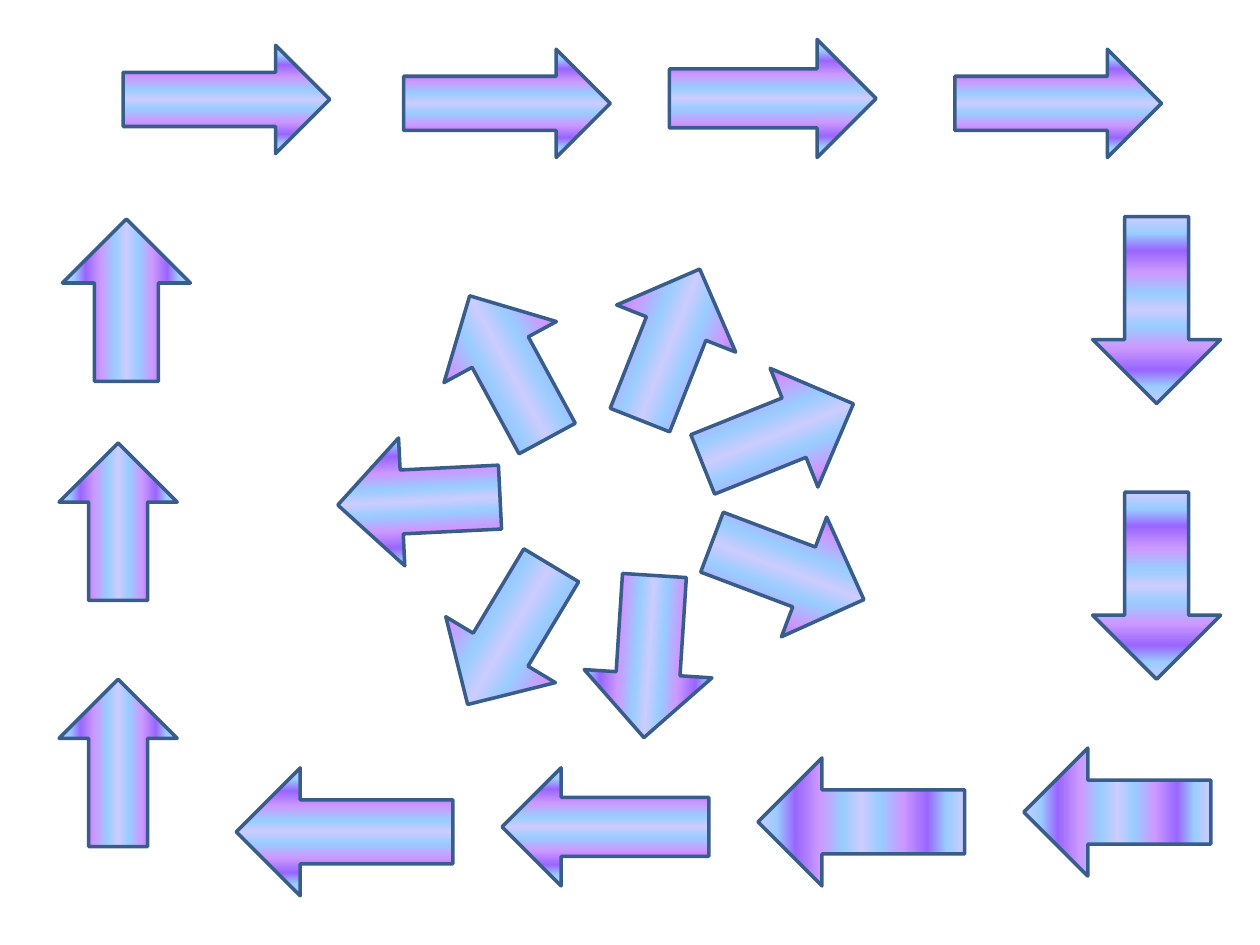
"""Build a slide with a loop of gradient arrows around a ring of seven arrows."""
from lxml import etree
from pptx import Presentation
from pptx import util as u
from pptx.dml.color import RGBColor
from pptx.enum import shapes
from pptx.oxml import ns

COLORS = {"lavender": "CCCCFF", "sky": "99CCFF", "violet": "9966FF",
          "orchid": "CC99FF", "outline": "385D8A"}
HALF = [(0, "lavender"), (9, "sky"), (18, "violet"), (30, "orchid"), (41, "sky")]
STOPS = HALF + [(50, "lavender")] + [(100 - place, name) for place, name in reversed(HALF)]
RIGHT, DOWN = shapes.MSO_SHAPE.RIGHT_ARROW, shapes.MSO_SHAPE.DOWN_ARROW

deck = Presentation()
deck.slide_width, deck.slide_height = u.Inches(10), u.Inches(7.5)
slide = deck.slides.add_slide(deck.slide_layouts[6])
COLUMN, ROW = deck.slide_width / 128, deck.slide_height / 96


def add_arrow(kind, column, row, columns, rows, turn=0):
    arrow = slide.shapes.add_shape(kind, round(column * COLUMN), round(row * ROW),
                                   round(columns * COLUMN), round(rows * ROW))
    arrow.rotation = turn
    arrow.shadow.inherit = False
    gradient = etree.Element(ns.qn("a:gradFill"), rotWithShape="1")
    stops = etree.SubElement(gradient, ns.qn("a:gsLst"))
    for place, name in STOPS:
        stop = etree.SubElement(stops, ns.qn("a:gs"), pos=str(place * 1000))
        etree.SubElement(stop, ns.qn("a:srgbClr"), val=COLORS[name])
    etree.SubElement(gradient, ns.qn("a:lin"), ang="5400000", scaled="0")
    arrow._element.spPr.find(ns.qn("a:prstGeom")).addnext(gradient)
    arrow.line.color.rgb = RGBColor.from_string(COLORS["outline"])
    arrow.line.width = u.Pt(2)


for column, row, rows in [(12.5, 4.6, 11), (41, 5, 11), (68, 4, 12), (97, 5, 11)]:
    add_arrow(RIGHT, column, row, 21, rows)

for row in (22, 50):
    add_arrow(DOWN, 111, row, 13, 19)

for column, length in [(107, 19), (81, 21)]:
    add_arrow(DOWN, column, 73, 13, length, turn=90)

for column, columns, rows in [(51, 21, 12), (24, 22, 13)]:
    add_arrow(RIGHT, column, 78, columns, rows, turn=180)

for column, row, columns, rows in [(3.5, 71.5, 17, 12), (4, 47, 16, 12), (4.6, 24, 16.5, 13)]:
    add_arrow(RIGHT, column, row, columns, rows, turn=270)

ring = [(43.5, 58, 121), (34.3, 44.4, 177.2), (43.4, 30.8, 241.5), (59.8, 28.5, 291.6),
        (70.8, 37.6, 338.1), (71.8, 51.5, 20.7), (57.7, 60.2, 93.7)]
for column, row, turn in ring:
    add_arrow(RIGHT, column, row, 16.5, 13, turn)

deck.save("out.pptx")
